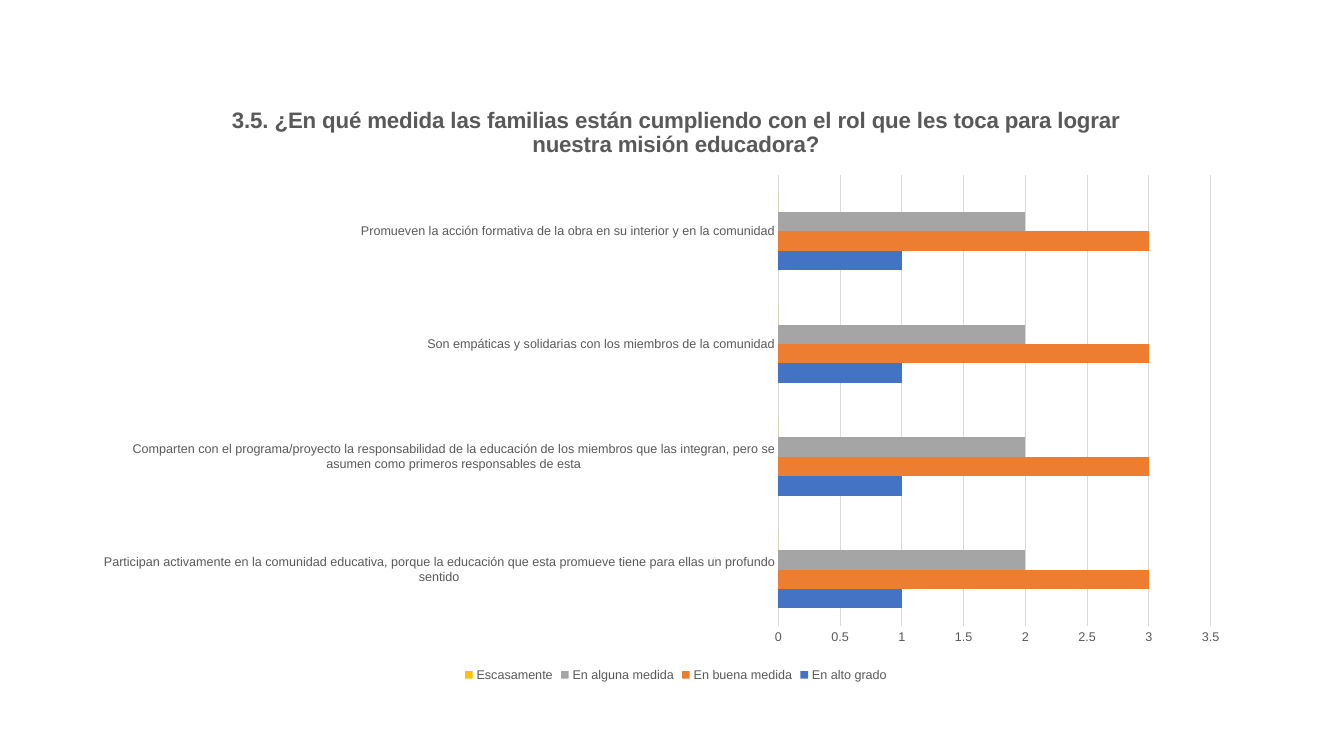
import pptx
import pptx.chart.data
import pptx.dml.color
import pptx.enum.chart
import pptx.oxml
import pptx.util


def color(value):
    return pptx.dml.color.RGBColor.from_string(value)


def write_text(frame, text, **style):
    para = frame.paragraphs[0]
    span = para.add_run()
    span.text = text
    for name, value in style.items():
        if name == "color":
            span.font.color.rgb = color(value)
        else:
            setattr(span.font, name, value)


deck = pptx.Presentation()
deck.slide_width = pptx.util.Pt(960)
deck.slide_height = pptx.util.Pt(540)
page = deck.slides.add_slide(deck.slide_layouts[6])

answers = {
    "En alto grado": (1, "4472C4"),
    "En buena medida": (3, "ED7D31"),
    "En alguna medida": (2, "A5A5A5"),
    "Escasamente": (0, "FFC000"),
}
data = pptx.chart.data.CategoryChartData(number_format="General")
data.categories = [
    "Participan activamente en la comunidad educativa, porque la educación que esta promueve tiene para ellas un profundo sentido",
    "Comparten con el programa/proyecto la responsabilidad de la educación de los miembros que las integran, pero se asumen como primeros responsables de esta",
    "Son empáticas y solidarias con los miembros de la comunidad",
    "Promueven la acción formativa de la obra en su interior y en la comunidad",
]
for answer, (score, fill) in answers.items():
    data.add_series(answer, [score] * 4)

chart = page.shapes.add_chart(
    pptx.enum.chart.XL_CHART_TYPE.BAR_CLUSTERED,
    pptx.util.Pt(74.2), pptx.util.Pt(60.5),
    pptx.util.Pt(815), pptx.util.Pt(429.8), data,
).chart
chart.font.name = "Arial"
chart.font.size = pptx.util.Pt(10)

write_text(
    chart.chart_title.text_frame,
    "3.5. ¿En qué medida las familias están cumpliendo con el rol que les toca para lograr nuestra misión educadora?",
    name="Arial", size=pptx.util.Pt(16), bold=True, color="595959",
)
chart.chart_title.include_in_layout = False

plot = chart.plots[0]
plot.gap_width = 182
plot.overlap = 0
plot.vary_by_categories = False
for series, (score, fill) in zip(plot.series, answers.values()):
    series.format.fill.solid()
    series.format.fill.fore_color.rgb = color(fill)

category_axis, value_axis = chart.category_axis, chart.value_axis
chart.has_legend = True
legend = chart.legend
legend.position = pptx.enum.chart.XL_LEGEND_POSITION.BOTTOM
legend.include_in_layout = False

for font in (category_axis.tick_labels.font, value_axis.tick_labels.font, legend.font):
    font.name = "Arial"
    font.size = pptx.util.Pt(9)
    font.color.rgb = color("595959")

for axis in (category_axis, value_axis):
    axis.major_tick_mark = pptx.enum.chart.XL_TICK_MARK.NONE
    axis.minor_tick_mark = pptx.enum.chart.XL_TICK_MARK.NONE

value_axis.minimum_scale = 0
value_axis.maximum_scale = 3.5
value_axis.major_unit = 0.5
value_axis.has_major_gridlines = True
value_axis.format.line.fill.background()
for line in (category_axis.format.line, value_axis.major_gridlines.format.line):
    line.color.rgb = color("D9D9D9")
    line.width = pptx.util.Pt(0.75)

plot_area = chart.element.chart.plotArea
for old_layout in plot_area.xpath("c:layout"):
    plot_area.remove(old_layout)
plot_area.insert(0, pptx.oxml.parse_xml(
    '<c:layout xmlns:c="http://schemas.openxmlformats.org/drawingml/2006/chart">'
    '<c:manualLayout><c:layoutTarget val="inner"/>'
    '<c:xMode val="edge"/><c:yMode val="edge"/>'
    '<c:x val="0.59"/><c:y val="0.15"/><c:w val="0.38"/><c:h val="0.75"/>'
    '</c:manualLayout></c:layout>'
))

deck.save("out.pptx")
